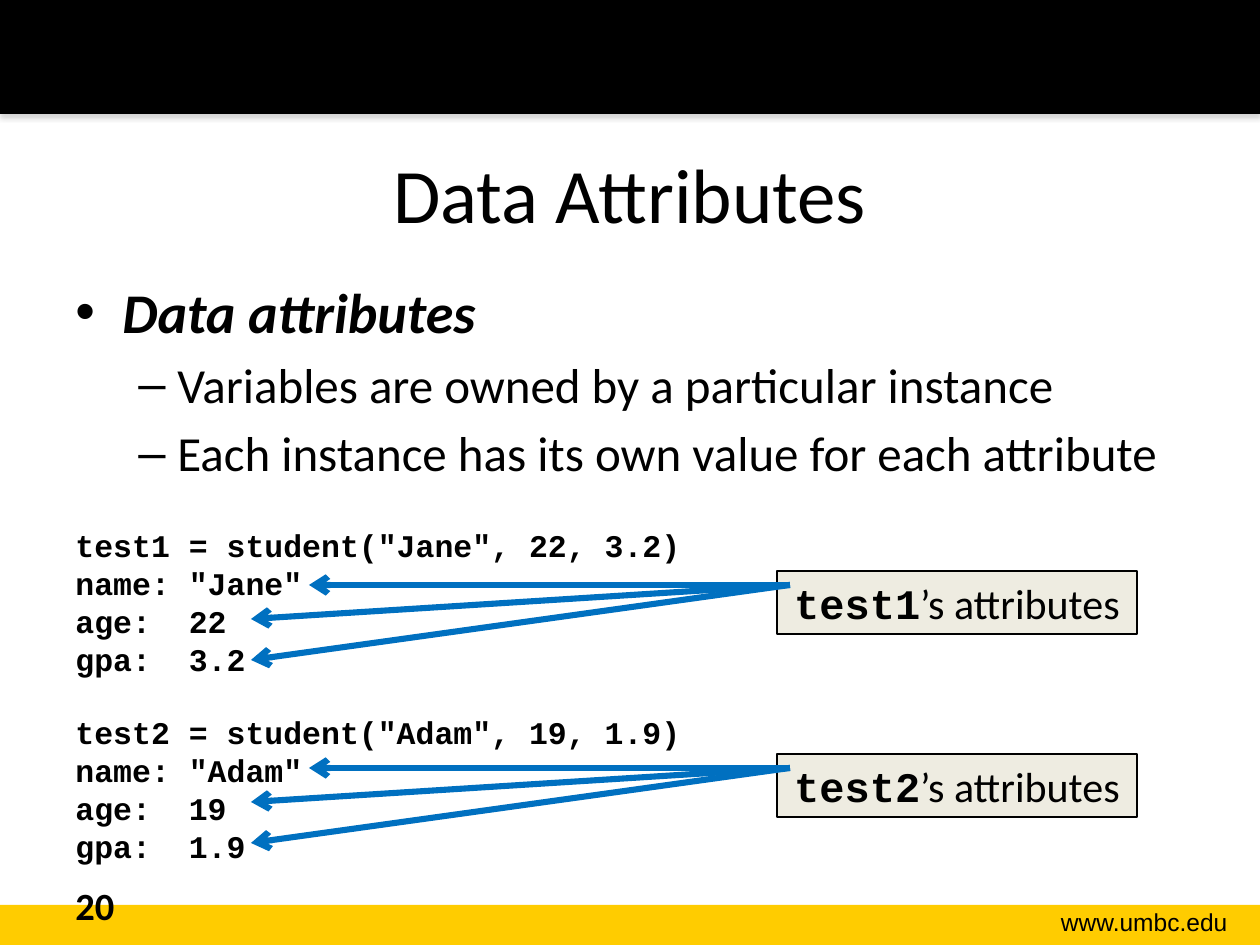
import pptx
import pptx.dml.color
import pptx.enum.shapes
import pptx.enum.text
import pptx.oxml
import pptx.oxml.ns
import pptx.util

RGB = pptx.dml.color.RGBColor
ALIGN = pptx.enum.text.PP_ALIGN
ANCHOR = pptx.enum.text.MSO_ANCHOR
BLACK = RGB(0x00, 0x00, 0x00)
GOLD = RGB(0xFF, 0xCC, 0x00)
CREAM = RGB(0xEE, 0xEC, 0xE1)
BLUE = RGB(0x00, 0x70, 0xC0)
PX = 914400 / 126

# Content: boxes are (left, top, width, height) in px
TITLE = "Data Attributes"
BULLETS = [
    # text, level, bullet, margin px, indent px, space before pt, format
    ("Data attributes", 0, "•", 47, -47, 0,
     {"size": 32, "bold": True, "italic": True}),
    ("Variables are owned by a particular instance", 1, "–", 102, -39, 5.6,
     {"size": 28}),
    ("Each instance has its own value for each attribute", 1, "–", 102, -39, 5.6,
     {"size": 28}),
]
INSTANCES = [
    # variable, code paragraphs, code top, callout top
    ("test1", ['test1 = student("Jane", 22, 3.2)\vname: "Jane"',
               "age:  22", "gpa:  3.2"], 520, 571),
    ("test2", ['test2 = student("Adam", 19, 1.9)\vname: "Adam"',
               "age:  19", "gpa:  1.9"], 707, 754),
]
ARROW_START = (790, 14)  # y values count from the top of the callout
ARROW_TIPS = [(309, 14), (251, 48), (251, 89)]

CODE = {"name": "Courier New", "bold": True}
SHADOW = """<a:effectLst %s><a:outerShdw blurRad="39370" dist="22860" dir="5400000"
rotWithShape="0"><a:srgbClr val="808080"><a:alpha val="35000"/></a:srgbClr>
</a:outerShdw></a:effectLst>""" % pptx.oxml.ns.nsdecls("a")


def emu(px):
    return round(px * PX)


def add_element(parent, tag, **attributes):
    child = parent.makeelement(pptx.oxml.ns.qn(tag), attributes)
    parent.append(child)
    return child


def style(run, **changes):
    look = {"name": "Calibri", "size": 18, "bold": False, "italic": False, **changes}
    look["size"] = pptx.util.Pt(look["size"])
    for key, value in look.items():
        setattr(run.font, key, value)
    run.font.color.rgb = BLACK


def write(paragraph, text, align=ALIGN.LEFT, **look):
    paragraph.text = text
    paragraph.alignment = align
    for run in paragraph.runs:
        style(run, **look)


def add_text(slide, box, anchor=ANCHOR.TOP):
    frame = slide.shapes.add_textbox(*map(emu, box)).text_frame
    frame.word_wrap = True
    frame.vertical_anchor = anchor
    return frame


def paragraphs(frame, count):
    return [frame.paragraphs[0]] + [frame.add_paragraph() for _ in range(count - 1)]


def add_rectangle(slide, box, fill):
    rectangle = slide.shapes.add_shape(
        pptx.enum.shapes.MSO_SHAPE.RECTANGLE, *map(emu, box))
    rectangle.shadow.inherit = False
    rectangle.fill.solid()
    rectangle.fill.fore_color.rgb = fill
    rectangle.line.fill.background()
    return rectangle


def add_bullets(slide):
    frame = add_text(slide, (63, 271, 1134, 573))
    for paragraph, (text, level, mark, margin, indent, before, look) in zip(
            paragraphs(frame, len(BULLETS)), BULLETS):
        paragraph.level = level
        paragraph.space_before = pptx.util.Pt(before)
        properties = paragraph._p.get_or_add_pPr()
        properties.set("marL", str(emu(margin)))
        properties.set("indent", str(emu(indent)))
        add_element(properties, "a:buFont", typeface="Arial")
        add_element(properties, "a:buChar", char=mark)
        write(paragraph, text, **look)


def add_callout(slide, variable, top):
    callout = add_rectangle(slide, (777, top, 360, 63), CREAM)
    callout.line.color.rgb = BLACK
    callout.line.width = pptx.util.Pt(0.75)
    callout.text_frame.word_wrap = True
    callout.text_frame.vertical_anchor = ANCHOR.TOP
    paragraph = callout.text_frame.paragraphs[0]
    write(paragraph, variable, ALIGN.CENTER, size=24, **CODE)
    suffix = paragraph.add_run()
    suffix.text = "’s attributes"
    style(suffix, size=24)


def add_arrow(slide, start, tip):
    arrow = slide.shapes.add_connector(
        pptx.enum.shapes.MSO_CONNECTOR.STRAIGHT, *map(emu, start + tip))
    arrow.line.color.rgb = BLUE
    arrow.line.width = pptx.util.Pt(3.5)
    add_element(arrow.line._get_or_add_ln(), "a:tailEnd", type="arrow")
    add_element(arrow._element.spPr, "a:effectLst")


def main():
    deck = pptx.Presentation()
    deck.slide_width, deck.slide_height = emu(1260), emu(945)
    slide = deck.slides.add_slide(deck.slide_layouts[6])

    add_rectangle(slide, (0, 905, 1260, 40), GOLD)
    header = add_rectangle(slide, (0, 0, 1260, 114), BLACK)
    properties = header._element.spPr
    properties.remove(properties.find(pptx.oxml.ns.qn("a:effectLst")))
    properties.append(pptx.oxml.parse_xml(SHADOW))

    address = add_text(slide, (989, 901, 251, 43))
    write(address.paragraphs[0], "www.umbc.edu", ALIGN.RIGHT, name="Arial", size=14)
    title = add_text(slide, (63, 114, 1134, 157), ANCHOR.MIDDLE)
    write(title.paragraphs[0], TITLE, ALIGN.CENTER, size=44)
    add_bullets(slide)
    number = add_text(slide, (63, 876, 294, 50), ANCHOR.TOP)
    write(number.paragraphs[0], "20", size=22, bold=True)

    for variable, code, code_top, callout_top in INSTANCES:
        frame = add_text(slide, (63, code_top, 636, 165))
        for paragraph, text in zip(paragraphs(frame, len(code)), code):
            write(paragraph, text, **CODE)
        add_callout(slide, variable, callout_top)
        start_x, start_y = ARROW_START
        for tip_x, tip_y in ARROW_TIPS:
            add_arrow(slide, (start_x, callout_top + start_y),
                      (tip_x, callout_top + tip_y))

    deck.save("out.pptx")


if __name__ == "__main__":
    main()
